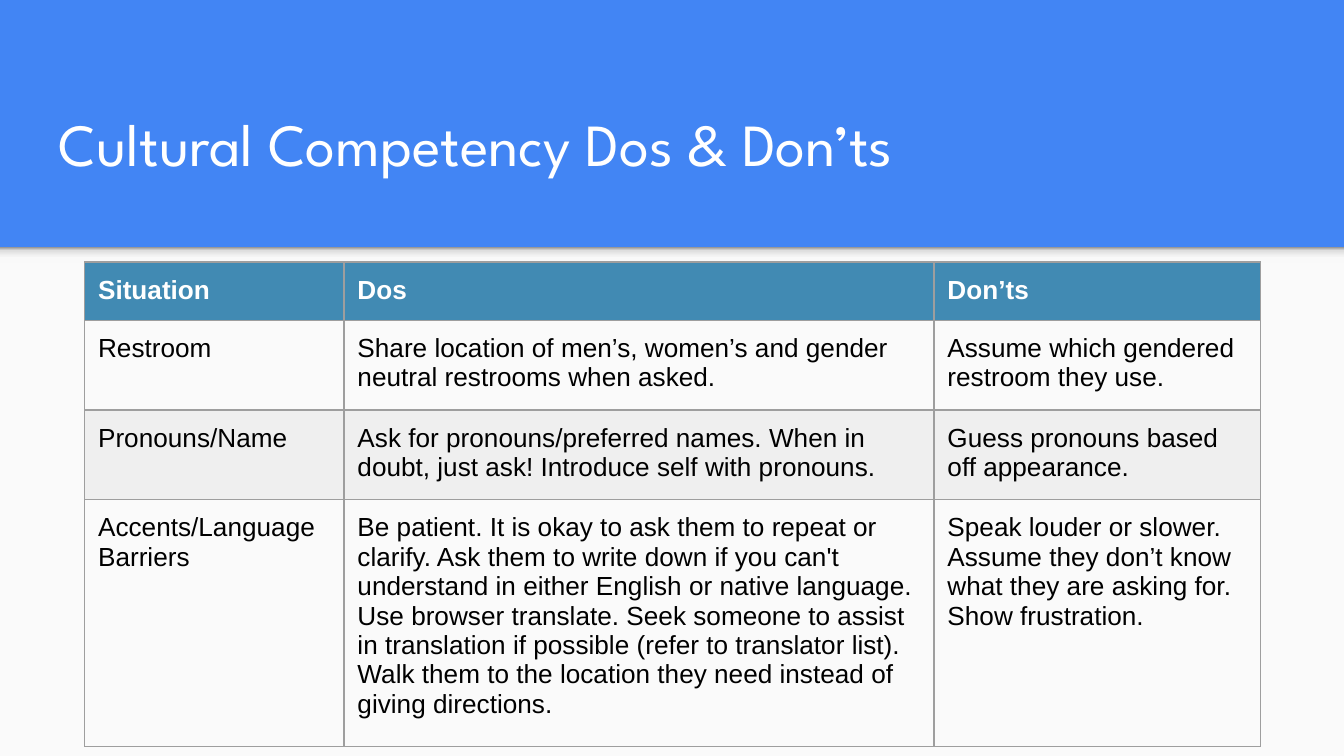
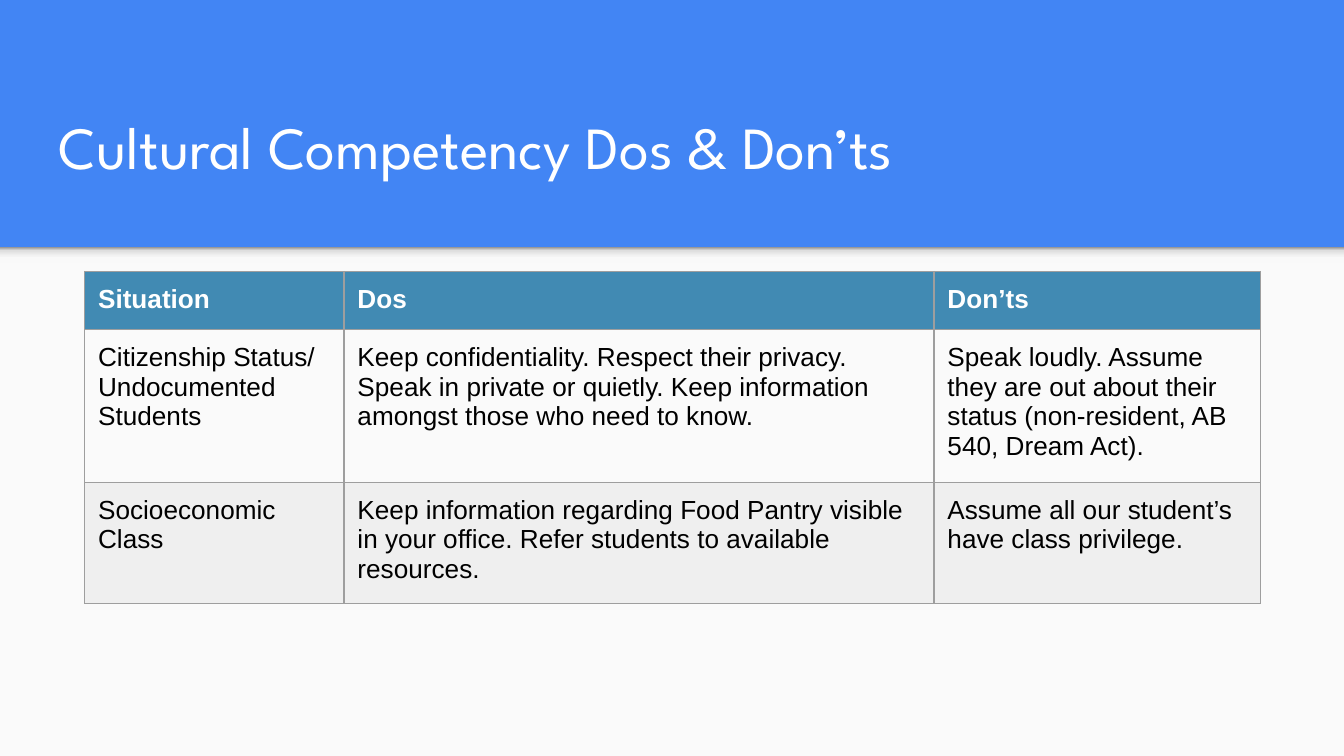
"""Build the two slides of cultural competency dos and don'ts."""
from dataclasses import dataclass

from lxml.etree import SubElement as Sub
from pptx import Presentation
from pptx.dml.color import RGBColor as Color
from pptx.enum.shapes import MSO_SHAPE as Shape
from pptx.enum.text import MSO_ANCHOR as Anchor
from pptx.oxml.ns import qn
from pptx.util import Inches, Pt


@dataclass(frozen=True)
class Theme:
    blue: str = "4285F4"
    paper: str = "FAFAFA"
    header: str = "418AB3"
    stripe: str = "EFEFEF"
    grid: str = "9E9E9E"
    white: str = "FFFFFF"
    black: str = "000000"
    shade: tuple = ((0, "F9F9F9"), (36, "F9F9F9"), (80, "DEDEDE"), (100, "999999"))
    title_font: str = "League Spartan"
    body_font: str = "Arial"
    title_size: int = 32
    body_size: int = 14
    grid_width: float = 0.75
    inset: float = 0.1


THEME = Theme()
WIDTH = 10
HEIGHT = WIDTH * 9 / 16
BAND = 1.84
COLUMNS = (1.93, 4.39, 2.43)
ROW_HEIGHT = 0.42
TABLE_SIDE = 3.28
TITLE = "Cultural Competency Dos & Don’ts"
HEADINGS = ("Situation", "Dos", "Don’ts")

SLIDES = (
    (0.66, 1.95, (
        ("Restroom",
         "Share location of men’s, women’s and gender neutral restrooms when asked.",
         "Assume which gendered restroom they use."),
        ("Pronouns/Name",
         "Ask for pronouns/preferred names. When in doubt, just ask! "
         "Introduce self with pronouns.",
         "Guess pronouns based off appearance."),
        ("Accents/Language Barriers",
         "Be patient. It is okay to ask them to repeat or clarify. Ask them to write "
         "down if you can't understand in either English or native language. "
         "Use browser translate. Seek someone to assist in translation if possible "
         "(refer to translator list). Walk them to the location they need instead of "
         "giving directions.",
         "Speak louder or slower. Assume they don’t know what they are asking for. "
         "Show frustration."),
    )),
    (0.68, 2.02, (
        ("Citizenship Status/ Undocumented Students",
         "Keep confidentiality. Respect their privacy. Speak in private or quietly. "
         "Keep information amongst those who need to know.",
         "Speak loudly. Assume they are out about their status "
         "(non-resident, AB 540, Dream Act)."),
        ("Socioeconomic Class",
         "Keep information regarding Food Pantry visible in your office. "
         "Refer students to available resources.",
         "Assume all our student’s have class privilege."),
    )),
)


def write(frame, text, font=THEME.body_font, size=THEME.body_size,
          color=THEME.black, bold=False):
    para = frame.paragraphs[0]
    para.line_spacing = 1.0
    para.space_before = para.space_after = Pt(0)
    span = para.add_run()
    span.text = text
    span.font.name = font
    span.font.size = Pt(size)
    span.font.bold = bold
    span.font.color.rgb = Color.from_string(color)


def set_insets(holder):
    for side in ("left", "top", "right", "bottom"):
        setattr(holder, f"margin_{side}", Inches(THEME.inset))


def paint(fill, color):
    fill.solid()
    fill.fore_color.rgb = Color.from_string(color)


def add_panel(slide, top, height, color):
    panel = slide.shapes.add_shape(
        Shape.RECTANGLE, 0, Inches(top), Inches(WIDTH), Inches(height))
    panel.shadow.inherit = False
    panel.line.fill.background()
    paint(panel.fill, color)
    return panel


def add_shade(slide):
    panel = add_panel(slide, BAND, 0.12, THEME.grid)
    properties = panel.element.spPr
    solid = properties.find(qn("a:solidFill"))
    gradient = Sub(properties, qn("a:gradFill"), rotWithShape="1")
    properties.replace(solid, gradient)
    stops = Sub(gradient, qn("a:gsLst"))
    for position, color in THEME.shade:
        stop = Sub(stops, qn("a:gs"), pos=str(position * 1000))
        Sub(stop, qn("a:srgbClr"), val=color)
    Sub(gradient, qn("a:lin"), ang=str(270 * 60000), scaled="0")


def add_title(slide, top):
    box = slide.shapes.add_textbox(
        Inches(0.34), Inches(top), Inches(9.32), Inches(0.77))
    frame = box.text_frame
    frame.word_wrap = True
    frame.vertical_anchor = Anchor.BOTTOM
    set_insets(frame)
    write(frame, TITLE, font=THEME.title_font, size=THEME.title_size,
          color=THEME.white)


def add_borders(cell):
    properties = cell._tc.get_or_add_tcPr()
    for side in "LRTB":
        line = Sub(properties, qn(f"a:ln{side}"), w=str(Pt(THEME.grid_width)))
        solid = Sub(line, qn("a:solidFill"))
        Sub(solid, qn("a:srgbClr"), val=THEME.grid)


def fill_cell(cell, text, row):
    is_header = row == 0
    set_insets(cell)
    add_borders(cell)
    if is_header:
        paint(cell.fill, THEME.header)
    elif row % 2 == 0:
        paint(cell.fill, THEME.stripe)
    else:
        cell.fill.background()
    write(cell.text_frame, text, bold=is_header,
          color=THEME.white if is_header else THEME.black)


def add_advice_table(slide, top, advice):
    rows = (HEADINGS, *advice)
    holder = slide.shapes.add_table(
        len(rows), len(COLUMNS), Inches(0.63), Inches(top),
        Inches(TABLE_SIDE), Inches(TABLE_SIDE))
    table = holder.table
    table.first_row = table.horz_banding = False
    for column, width in zip(table.columns, COLUMNS):
        column.width = Inches(width)
    for index, texts in enumerate(rows):
        table.rows[index].height = Inches(ROW_HEIGHT)
        for cell, text in zip(table.rows[index].cells, texts):
            fill_cell(cell, text, index)
    holder.width = holder.height = Inches(TABLE_SIDE)


def add_advice_slide(deck, title_top, table_top, advice):
    slide = deck.slides.add_slide(deck.slide_layouts[6])
    paint(slide.background.fill, THEME.blue)
    add_panel(slide, BAND, HEIGHT - BAND, THEME.paper)
    add_shade(slide)
    add_title(slide, title_top)
    add_advice_table(slide, table_top, advice)


def main():
    deck = Presentation()
    deck.slide_width, deck.slide_height = Inches(WIDTH), Inches(HEIGHT)
    for title_top, table_top, advice in SLIDES:
        add_advice_slide(deck, title_top, table_top, advice)
    deck.save("out.pptx")


if __name__ == "__main__":
    main()
